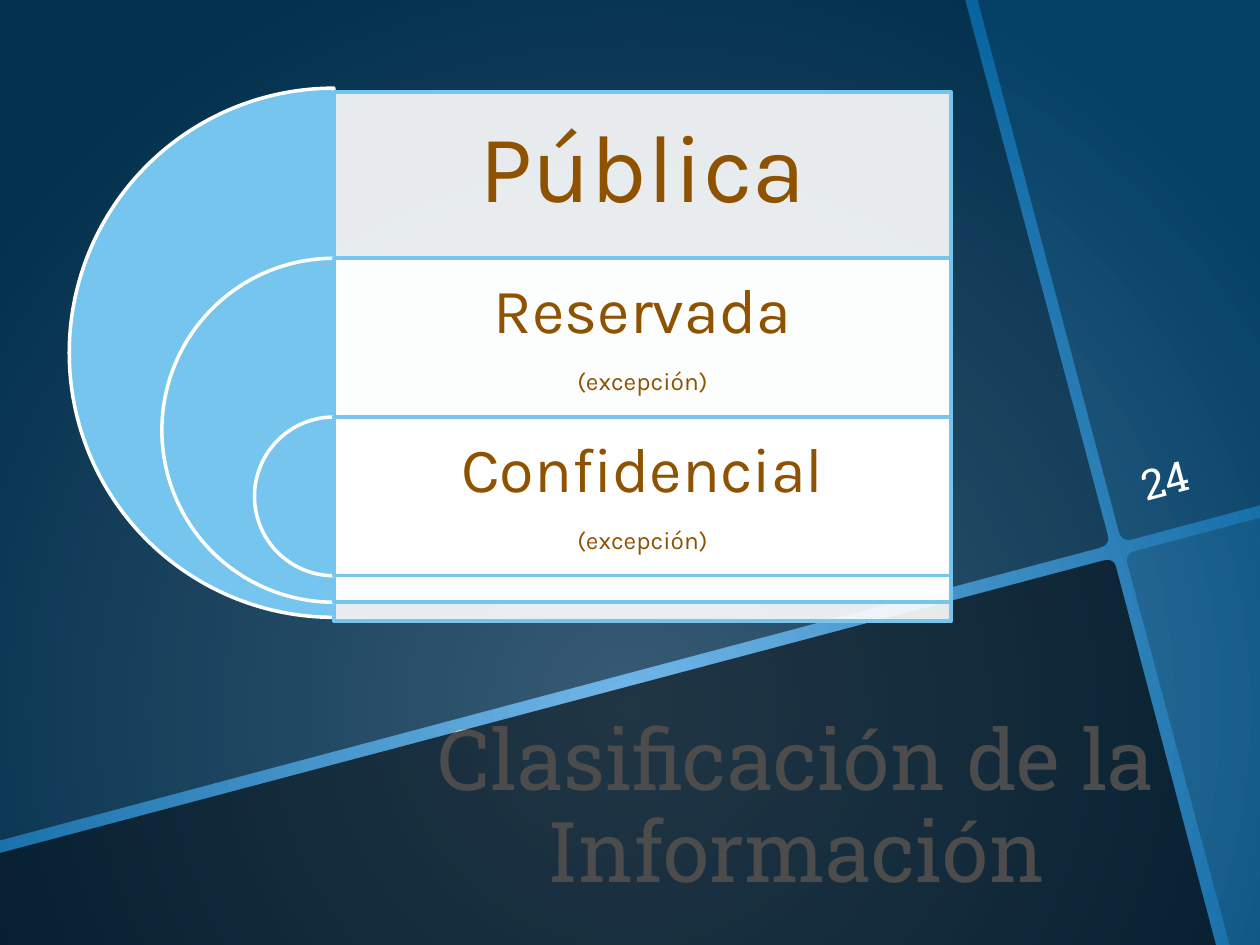
from lxml import etree
from pptx import Presentation, util as u
from pptx.dml.color import RGBColor
from pptx.enum import shapes, text
from pptx.oxml.ns import qn

# The slide is a grid of square cells
COLUMNS, ROWS = 100, 75
CELL = u.Inches(0.1)

COLORS = {
    "glow": "70B6E8",
    "edge": "08639E",
    "shade": "000000",
    "white": "FFFFFF",
    "sky": "76C5EF",
    "brown": "8F5201",
}
HEADING_FONT, BODY_FONT = "Roboto Slab", "Karla"

# Opacity, straight outline, then the rounded corner: start, tip, end
PANELS = [
    (50, [(0, 66.7), (0, 0), (76.6, 0)], [(87.9, 42.4), (88.15, 43.25), (87.2, 43.5)]),
    (70, [(96.5, 75), (0, 75), (0, 67.7)], [(87.5, 44.5), (88.43, 44.25), (88.6, 45.1)]),
    (20, [(100, 41.1), (100, 75), (97.6, 75)], [(89.5, 44.8), (89.24, 43.9), (90.2, 43.7)]),
    (35, [(77.6, 0), (100, 0), (100, 40.1)], [(89.9, 42.8), (89.05, 43.03), (88.8, 42.2)]),
]

# Diameter share, disc top, band top, text inset, lines with their sizes
LEVELS = [
    (1, 0, 0.3, 2.3, [("Pública", 55)]),
    (0.65, 13.5, 13.5, 1.5, [("Reservada", 36), ("(excepción)", 14)]),
    (0.3, 26.1, 26.1, 1.5, [("Confidencial", 36), ("(excepción)", 14)]),
]


def rgb(name):
    return RGBColor.from_string(COLORS[name])


def cells(*lengths):
    return [u.Emu(round(length * CELL)) for length in lengths]


def paint(shape, color, opacity=100, outline=None):
    shape.shadow.inherit = False
    shape.fill.solid()
    shape.fill.fore_color.rgb = rgb(color)
    if opacity < 100:
        fill_color = shape.element.spPr.find(f"{qn('a:solidFill')}/{qn('a:srgbClr')}")
        etree.SubElement(fill_color, qn("a:alpha"), val=str(opacity * 1000))
    if outline:
        shape.line.color.rgb = rgb(outline)
        shape.line.width = u.Pt(2)
    else:
        shape.line.fill.background()


def style(paragraph, font, size, color, align):
    paragraph.alignment = align
    for run in paragraph.runs:
        run.font.name = font
        run.font.size = u.Pt(size)
        run.font.color.rgb = rgb(color)


def set_background(slide):
    fill = slide.background.fill
    fill.gradient()
    for stop, color, position in zip(fill.gradient_stops, ("glow", "edge"), (0, 1)):
        stop.color.rgb = rgb(color)
        stop.position = position
    gradient = next(slide.element.iter(qn("a:gradFill")))
    linear = gradient.find(qn("a:lin"))
    radial = etree.Element(qn("a:path"), path="circle")
    etree.SubElement(radial, qn("a:fillToRect"), l="50000", t="50000", r="50000", b="0")
    gradient.replace(linear, radial)


def round_corner(start, tip, end, steps=8):
    """Points along the quadratic curve from start to end, pulled towards tip."""
    for step in range(steps + 1):
        t = step / steps
        yield tuple((1 - t) ** 2 * a + 2 * t * (1 - t) * b + t ** 2 * c
                    for a, b, c in zip(start, tip, end))


def add_panel(slide, opacity, edges, corner):
    points = [cells(*point) for point in [*edges, *round_corner(*corner)]]
    builder = slide.shapes.build_freeform(*points[0])
    builder.add_line_segments(points[1:], close=True)
    paint(builder.convert_to_shape(), "shade", opacity)


def set_title(slide, box):
    title = slide.shapes.title
    title.left, title.top, title.width, title.height = cells(*box)
    frame = title.text_frame
    frame.text = "Clasificación de la Información"
    frame.word_wrap = True
    frame.auto_size = text.MSO_AUTO_SIZE.NONE
    frame.vertical_anchor = text.MSO_ANCHOR.TOP
    frame.paragraphs[0].line_spacing = 0.91
    style(frame.paragraphs[0], HEADING_FONT, 48, "white", text.PP_ALIGN.CENTER)


def add_page_number(slide, box):
    number = slide.shapes.add_textbox(*cells(*box))
    number.rotation = 345
    frame = number.text_frame
    frame.word_wrap = True
    frame.vertical_anchor = text.MSO_ANCHOR.MIDDLE
    frame.text = "24"
    style(frame.paragraphs[0], HEADING_FONT, 24, "white", text.PP_ALIGN.LEFT)


def add_label(parent, box, inset, lines):
    frame = parent.add_textbox(*cells(*box)).text_frame
    frame.word_wrap = True
    frame.vertical_anchor = text.MSO_ANCHOR.MIDDLE
    margin, = cells(inset)
    frame.margin_left = frame.margin_right = margin
    frame.margin_top = frame.margin_bottom = margin
    frame.text = "\n".join(line for line, _ in lines)
    for paragraph, (_, size) in zip(frame.paragraphs, lines):
        paragraph.line_spacing = 0.9
        paragraph.space_after = u.Pt(0.35 * size)
        style(paragraph, BODY_FONT, size, "brown", text.PP_ALIGN.CENTER)


def add_nested_levels(slide, box):
    """Half discs on the left, one inside the other, each with a band of text."""
    left, top, width, height = box
    axis = left + height / 2
    band_width = left + width - axis
    row_height = 0.3 * height
    parent = slide.shapes.add_group_shape().shapes
    for share, disc_top, band_top, inset, lines in LEVELS:
        size = share * height
        disc = parent.add_shape(shapes.MSO_SHAPE.PIE,
                                *cells(axis - size / 2, top + disc_top, size, size))
        disc.adjustments[0], disc.adjustments[1] = 54, 162
        paint(disc, "sky", outline="white")
        band = parent.add_shape(shapes.MSO_SHAPE.RECTANGLE,
                                *cells(axis, top + band_top, band_width, size))
        paint(band, "white", 90, "sky")
        add_label(parent, (axis, top + band_top, band_width, row_height), inset, lines)


def main():
    deck = Presentation()
    deck.slide_width, deck.slide_height = cells(COLUMNS, ROWS)
    slide = deck.slides.add_slide(deck.slide_layouts[5])
    set_background(slide)
    for panel in PANELS:
        add_panel(slide, *panel)
    set_title(slide, (33.5, 56.4, 59.4, 14.2))
    add_page_number(slide, (89.5, 35.5, 9.9, 4))
    add_nested_levels(slide, (5.5, 7, 70, 42))
    deck.save("out.pptx")


if __name__ == "__main__":
    main()
